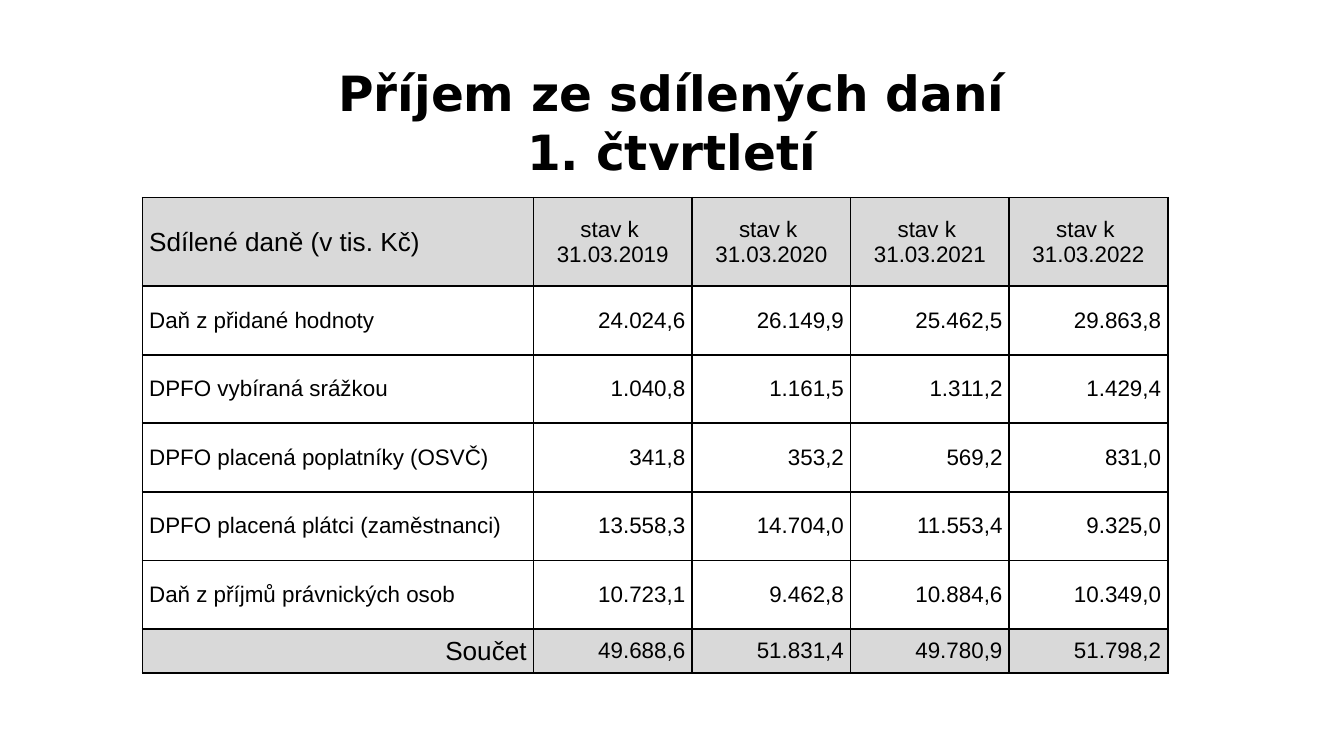
from lxml import etree
from pptx import Presentation
from pptx.dml.color import RGBColor
from pptx.enum.text import MSO_ANCHOR, PP_ALIGN
from pptx.oxml.ns import qn
from pptx.util import Inches, Pt

LEFT, CENTER, RIGHT = PP_ALIGN.LEFT, PP_ALIGN.CENTER, PP_ALIGN.RIGHT
MIDDLE = MSO_ANCHOR.MIDDLE
BLACK = RGBColor(0x00, 0x00, 0x00)
WHITE = RGBColor(0xFF, 0xFF, 0xFF)
GRAY = RGBColor(0xD9, 0xD9, 0xD9)

TITLE = "Příjem ze sdílených daní\n1. čtvrtletí"
YEARS = range(2019, 2023)
ROWS = [
    ["Sdílené daně (v tis. Kč)"] + [f"stav k \n31.03.{year}" for year in YEARS],
    ["Daň z přidané hodnoty", "24.024,6", "26.149,9", "25.462,5", "29.863,8"],
    ["DPFO vybíraná srážkou", "1.040,8", "1.161,5", "1.311,2", "1.429,4"],
    ["DPFO placená poplatníky (OSVČ)", "341,8", "353,2", "569,2", "831,0"],
    ["DPFO placená plátci (zaměstnanci)", "13.558,3", "14.704,0", "11.553,4", "9.325,0"],
    ["Daň z příjmů právnických osob", "10.723,1", "9.462,8", "10.884,6", "10.349,0"],
    ["Součet", "49.688,6", "51.831,4", "49.780,9", "51.798,2"],
]
WIDTHS = [2.91] + [1.18] * 4
HEIGHTS = [0.66] + [0.51] * 5 + [0.33]


def write(frame, text, size, face, align, bold=False):
    para = frame.paragraphs[0]
    para.text = text
    para.alignment = align
    font = para.font
    font.size, font.name, font.bold = Pt(size), face, bold
    font.color.rgb = BLACK


def add_title(slide):
    box = slide.shapes.add_textbox(Inches(0.5), Inches(0.49), Inches(9), Inches(0.83))
    frame = box.text_frame
    frame.word_wrap = True
    frame.vertical_anchor = MIDDLE
    write(frame, TITLE, 26, "DejaVu Sans", CENTER, True)


def add_border(cell):
    props = cell._tc.get_or_add_tcPr()
    for side in ("a:lnL", "a:lnR", "a:lnT", "a:lnB"):
        line = etree.SubElement(props, qn(side), w=str(Pt(1)))
        fill = etree.SubElement(line, qn("a:solidFill"))
        etree.SubElement(fill, qn("a:srgbClr"), val=str(BLACK))


def style_cell(cell, text, size, align, color):
    cell.margin_left = cell.margin_right = Inches(0.05)
    cell.margin_top = cell.margin_bottom = 0
    cell.vertical_anchor = MIDDLE
    add_border(cell)
    cell.fill.solid()
    cell.fill.fore_color.rgb = color
    write(cell.text_frame, text, size, "Arial", align)


def add_taxes(slide):
    frame = slide.shapes.add_table(
        len(ROWS), len(WIDTHS), Inches(1.06), Inches(1.47),
        Inches(sum(WIDTHS)), Inches(sum(HEIGHTS)))
    table = frame.table
    table.first_row = table.horz_banding = False
    for col, width in zip(table.columns, WIDTHS):
        col.width = Inches(width)
    for row, height in zip(table.rows, HEIGHTS):
        row.height = Inches(height)
    last = len(ROWS) - 1
    for r, row in enumerate(ROWS):
        edge = r in (0, last)
        for c, text in enumerate(row):
            if c == 0:
                align = RIGHT if r == last else LEFT
            else:
                align = CENTER if r == 0 else RIGHT
            size = 14 if edge and c == 0 else 12
            style_cell(table.cell(r, c), text, size, align, GRAY if edge else WHITE)


def main():
    deck = Presentation()
    deck.slide_width = Inches(10)
    deck.slide_height = Inches(10 * 9 / 16)
    slide = deck.slides.add_slide(deck.slide_layouts[6])
    add_title(slide)
    add_taxes(slide)
    deck.save("out.pptx")


if __name__ == "__main__":
    main()
